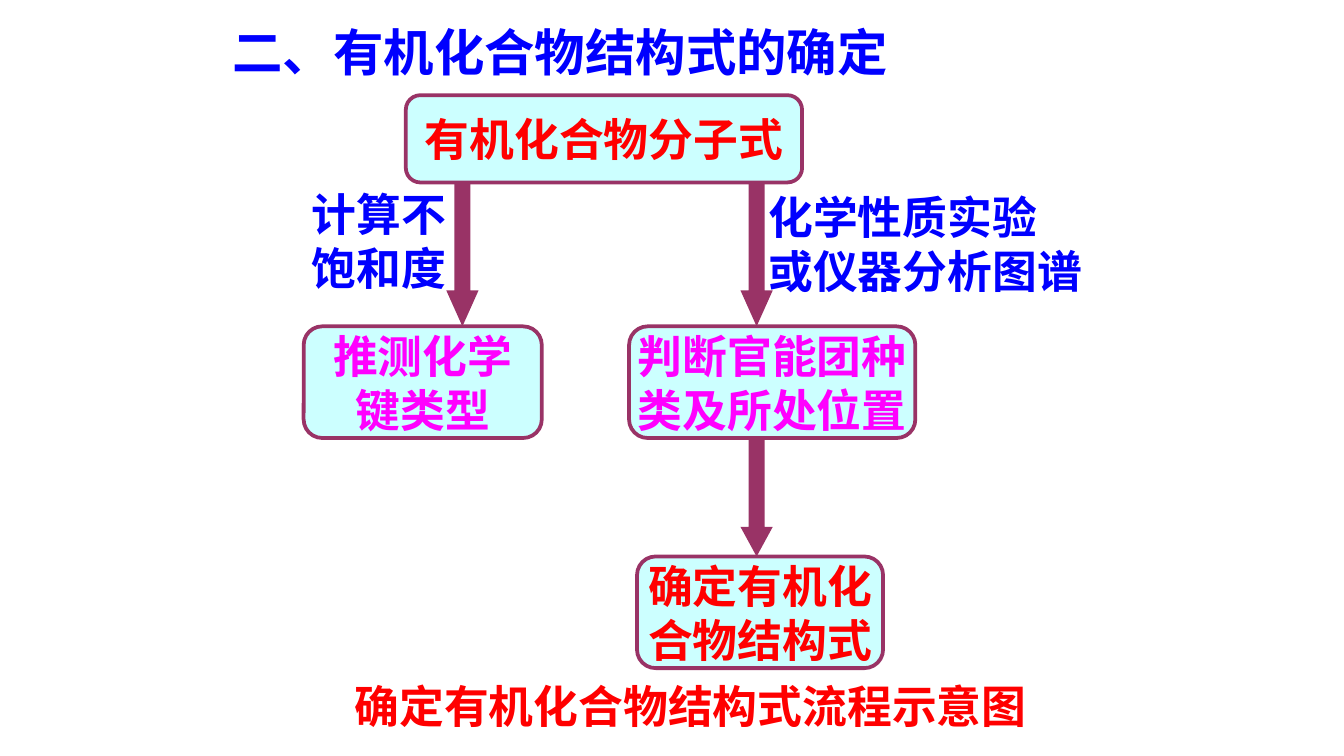
from lxml.etree import SubElement
from pptx import Presentation
from pptx.dml.color import RGBColor
from pptx.enum.shapes import MSO_SHAPE as Shape
from pptx.enum.text import MSO_ANCHOR as Anchor, MSO_AUTO_SIZE as AutoSize, PP_ALIGN as Align
from pptx.oxml.ns import qn
from pptx.util import Cm, Pt

FONT = "Noto Sans CJK SC"
PLUM, PALE_CYAN = "993366", "CCFFFF"
RED, BLUE, MAGENTA = "FF0000", "0000FF", "FF00FF"

# Vertical levels of the flow chart, in cm
FORMULA_TOP, FORMULA_BOTTOM = 1.8, 3.45
STEP_TOP, STEP_HEIGHT = 6.17, 2.11
RESULT_TOP = 10.52
LEFT_AXIS, RIGHT_AXIS = 8.74, 14.3
ARROW_WIDTH = 0.61


def color(hex_string):
    return RGBColor.from_string(hex_string)


def write_lines(shape, lines, hex_string, size=24, align=Align.LEFT, anchor=Anchor.TOP):
    """Write one bold paragraph per line, without wrapping."""
    frame = shape.text_frame
    frame.word_wrap = False
    frame.auto_size = AutoSize.NONE
    frame.vertical_anchor = anchor
    for index, line in enumerate(lines):
        paragraph = frame.add_paragraph() if index else frame.paragraphs[0]
        paragraph.alignment = align
        paragraph.line_spacing = Pt(round(size * 1.21))
        paragraph.space_before = Pt(0)
        run = paragraph.add_run()
        run.text = line
        font = run.font
        font.name, font.size, font.bold = FONT, Pt(size), True
        font.color.rgb = color(hex_string)
        east_asian = SubElement(run._r.get_or_add_rPr(), qn("a:ea"))
        east_asian.set("typeface", FONT)


def add_title(slide, text):
    title = slide.shapes.title
    title.left, title.top, title.width, title.height = Cm(4.14), Cm(0.25), Cm(12.95), Cm(1.4)
    write_lines(title, [text], BLUE, size=27)


def add_box(slide, left, top, width, height, lines, hex_string):
    box = slide.shapes.add_shape(
        Shape.ROUNDED_RECTANGLE, Cm(left), Cm(top), Cm(width), Cm(height))
    box.shadow.inherit = False
    box.fill.solid()
    box.fill.fore_color.rgb = color(PALE_CYAN)
    box.line.color.rgb = color(PLUM)
    box.line.width = Pt(2)
    write_lines(box, lines, hex_string, align=Align.CENTER, anchor=Anchor.MIDDLE)


def add_arrow(slide, axis, top, bottom):
    """Add a block arrow centred on axis, its head a quarter of its length."""
    length = bottom - top
    arrow = slide.shapes.add_shape(
        Shape.DOWN_ARROW, Cm(axis - ARROW_WIDTH / 2), Cm(top), Cm(ARROW_WIDTH), Cm(length))
    arrow.adjustments[1] = length / 4 / ARROW_WIDTH
    arrow.shadow.inherit = False
    arrow.fill.solid()
    arrow.fill.fore_color.rgb = color(PLUM)
    arrow.line.fill.background()


def add_label(slide, left, top, width, height, lines, hex_string):
    label = slide.shapes.add_textbox(Cm(left), Cm(top), Cm(width), Cm(height))
    write_lines(label, lines, hex_string)


def main():
    presentation = Presentation()
    presentation.slide_width, presentation.slide_height = Cm(25.4), Cm(14.29)
    slide = presentation.slides.add_slide(presentation.slide_layouts[5])
    add_title(slide, "二、有机化合物结构式的确定")

    add_box(slide, 7.67, FORMULA_TOP, 7.49, FORMULA_BOTTOM - FORMULA_TOP,
            ["有机化合物分子式"], RED)
    for left, top, width, lines, hex_string in (
        (5.74, STEP_TOP, 4.5, ["推测化学", "键类型"], MAGENTA),
        (11.89, STEP_TOP, 5.41, ["判断官能团种", "类及所处位置"], MAGENTA),
        (12.04, RESULT_TOP, 4.65, ["确定有机化", "合物结构式"], RED),
    ):
        add_box(slide, left, top, width, STEP_HEIGHT, lines, hex_string)

    add_arrow(slide, LEFT_AXIS, FORMULA_BOTTOM, STEP_TOP)
    add_arrow(slide, RIGHT_AXIS, FORMULA_BOTTOM, STEP_TOP)
    add_arrow(slide, RIGHT_AXIS, STEP_TOP + STEP_HEIGHT, RESULT_TOP)

    add_label(slide, 5.64, 3.4, 3.05, 2.31, ["计算不", "饱和度"], BLUE)
    add_label(slide, 14.27, 3.45, 6.45, 2.31, ["化学性质实验", "或仪器分析图谱"], BLUE)
    add_label(slide, 6.45, 12.7, 13.26, 1.27, ["确定有机化合物结构式流程示意图"], RED)

    presentation.save("out.pptx")


if __name__ == "__main__":
    main()
